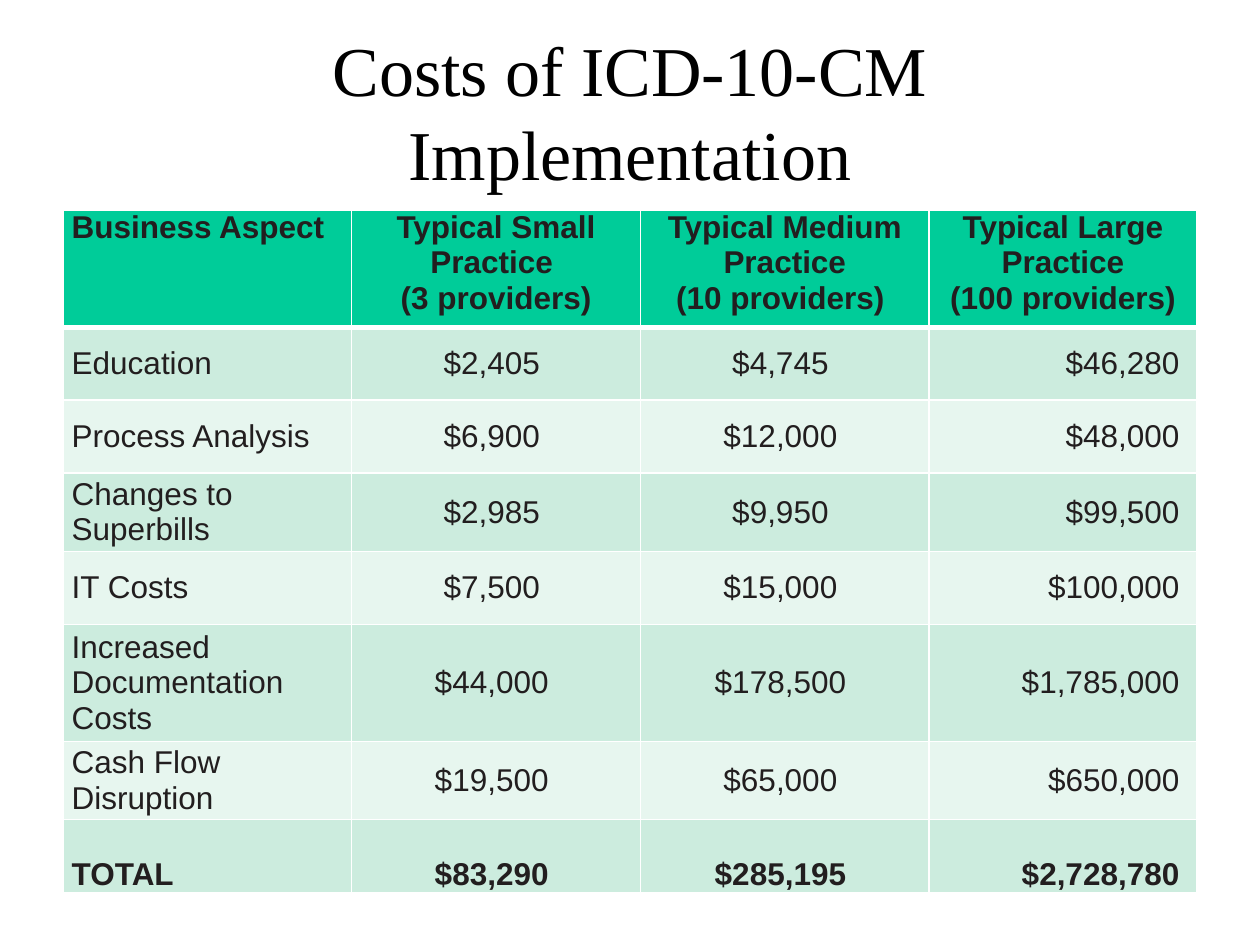
"""Build a slide with a table of ICD-10-CM implementation costs by practice size."""
import pptx
import pptx.dml.color
import pptx.enum.text
import pptx.oxml
import pptx.oxml.ns
import pptx.util

Pt = pptx.util.Pt
ALIGN = pptx.enum.text.PP_ALIGN
ANCHOR = pptx.enum.text.MSO_ANCHOR

TITLE = "Costs of ICD-10-CM Implementation"
HEADER = [
    ["Business Aspect"],
    ["Typical Small Practice ", "(3 providers)"],
    ["Typical Medium Practice", "(10 providers) "],
    ["Typical Large Practice", "(100 providers)"],
]
COSTS = [
    (["Education"], "$2,405 ", "$4,745 ", "$46,280 "),
    (["Process Analysis"], "$6,900 ", "$12,000 ", "$48,000 "),
    (["Changes to Superbills"], "$2,985 ", "$9,950 ", "$99,500 "),
    (["IT Costs"], "$7,500 ", "$15,000 ", "$100,000 "),
    (["Increased Documentation", "Costs"], "$44,000 ", "$178,500 ", "$1,785,000 "),
    (["Cash Flow Disruption"], "$19,500 ", "$65,000 ", "$650,000 "),
    (["TOTAL"], "$83,290 ", "$285,195 ", "$2,728,780 "),
]
COLORS = {
    "title": "000000", "text": "221E1F", "border": "FFFFFF",
    "header": "00CC99", "odd": "CCECDE", "even": "E7F6EF",
}
COL_WIDTHS = [165, 165, 165, 153]
ROW_HEIGHTS = [67, 41.75, 41.75, 44.6, 41.75, 67, 44.6, 41.75]


def rgb(name):
    return pptx.dml.color.RGBColor.from_string(COLORS[name])


def add_text(tf, lines, align, font, size, color, bold=False):
    for i, line in enumerate(lines):
        p = tf.paragraphs[0] if i == 0 else tf.add_paragraph()
        p.alignment = align
        r = p.add_run()
        r.text = line
        r.font.name, r.font.size, r.font.bold = font, Pt(size), bold
        r.font.color.rgb = rgb(color)


def set_borders(cell, bottom):
    tc_pr = cell._tc.get_or_add_tcPr()
    widths = {"lnL": 1, "lnR": 1, "lnT": 1, "lnB": bottom}
    for i, (tag, width) in enumerate(widths.items()):
        tc_pr.insert(i, pptx.oxml.parse_xml(
            f'<a:{tag} {pptx.oxml.ns.nsdecls("a")} w="{Pt(width)}"><a:solidFill>'
            f'<a:srgbClr val="{COLORS["border"]}"/></a:solidFill></a:{tag}>'))


def add_title(s):
    tf = s.shapes.add_textbox(Pt(54), Pt(18), Pt(612), Pt(90)).text_frame
    tf.word_wrap = True
    tf.vertical_anchor = ANCHOR.MIDDLE
    add_text(tf, [TITLE], ALIGN.CENTER, "Times New Roman", 40, "title")


def add_cost_table(s):
    rows = [HEADER] + [[label] + [[cost] for cost in costs] for label, *costs in COSTS]
    last = len(rows) - 1
    table = s.shapes.add_table(
        len(rows), len(HEADER), Pt(36), Pt(120),
        Pt(sum(COL_WIDTHS)), Pt(sum(ROW_HEIGHTS))).table
    for col, width in zip(table.columns, COL_WIDTHS):
        col.width = Pt(width)
    for i, (row, height) in enumerate(zip(rows, ROW_HEIGHTS)):
        table.rows[i].height = Pt(height)
        fill = "header" if i == 0 else "odd" if i % 2 else "even"
        anchor = {0: ANCHOR.TOP, last: ANCHOR.BOTTOM}.get(i, ANCHOR.MIDDLE)
        aligns = [ALIGN.LEFT, ALIGN.CENTER, ALIGN.CENTER,
                  ALIGN.RIGHT if i else ALIGN.CENTER]
        for j, (lines, align) in enumerate(zip(row, aligns)):
            cell = table.cell(i, j)
            cell.margin_left = cell.margin_right = Pt(5)
            cell.margin_top = cell.margin_bottom = Pt(0)
            cell.vertical_anchor = anchor
            cell.fill.solid()
            cell.fill.fore_color.rgb = rgb(fill)
            set_borders(cell, 1 if i else 3)
            add_text(cell.text_frame, lines, align, "Arial", 18, "text", i in (0, last))


def main():
    prs = pptx.Presentation()
    prs.slide_width, prs.slide_height = Pt(720), Pt(540)
    s = prs.slides.add_slide(prs.slide_layouts[6])
    add_title(s)
    add_cost_table(s)
    prs.save("out.pptx")


if __name__ == "__main__":
    main()
